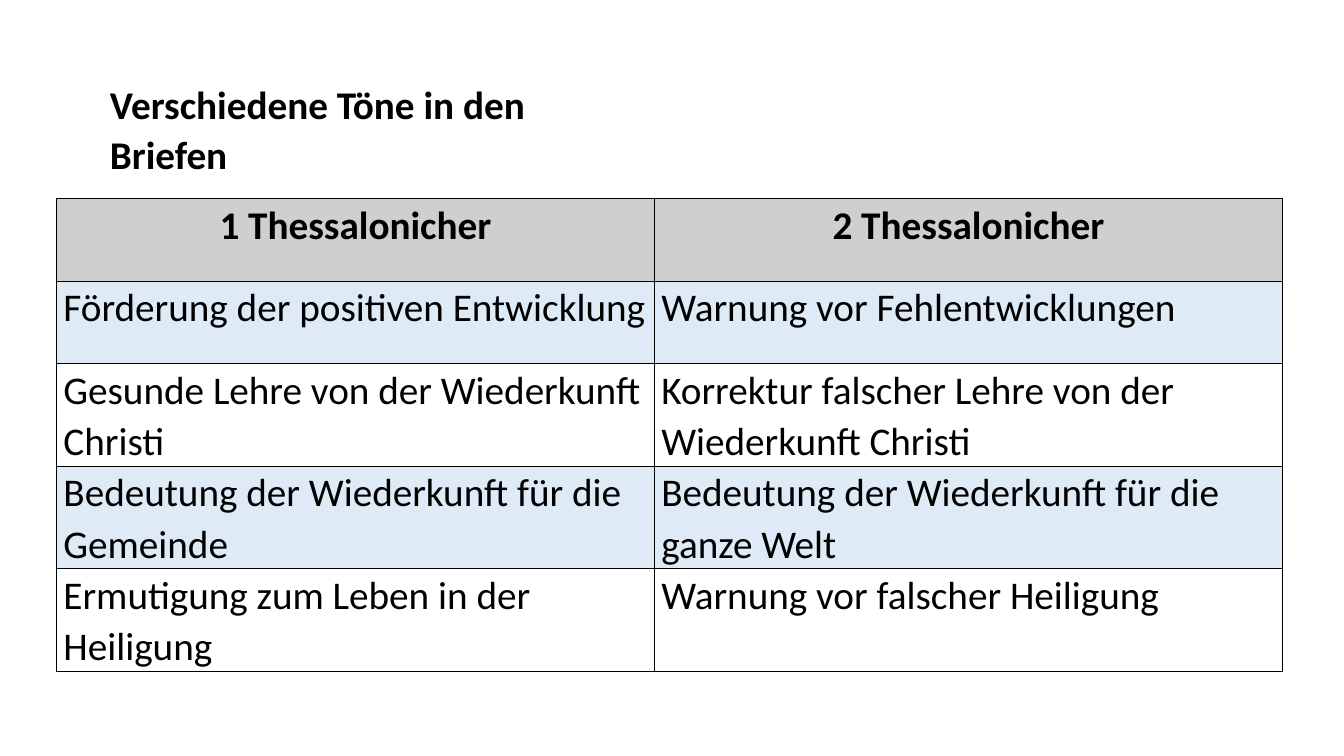
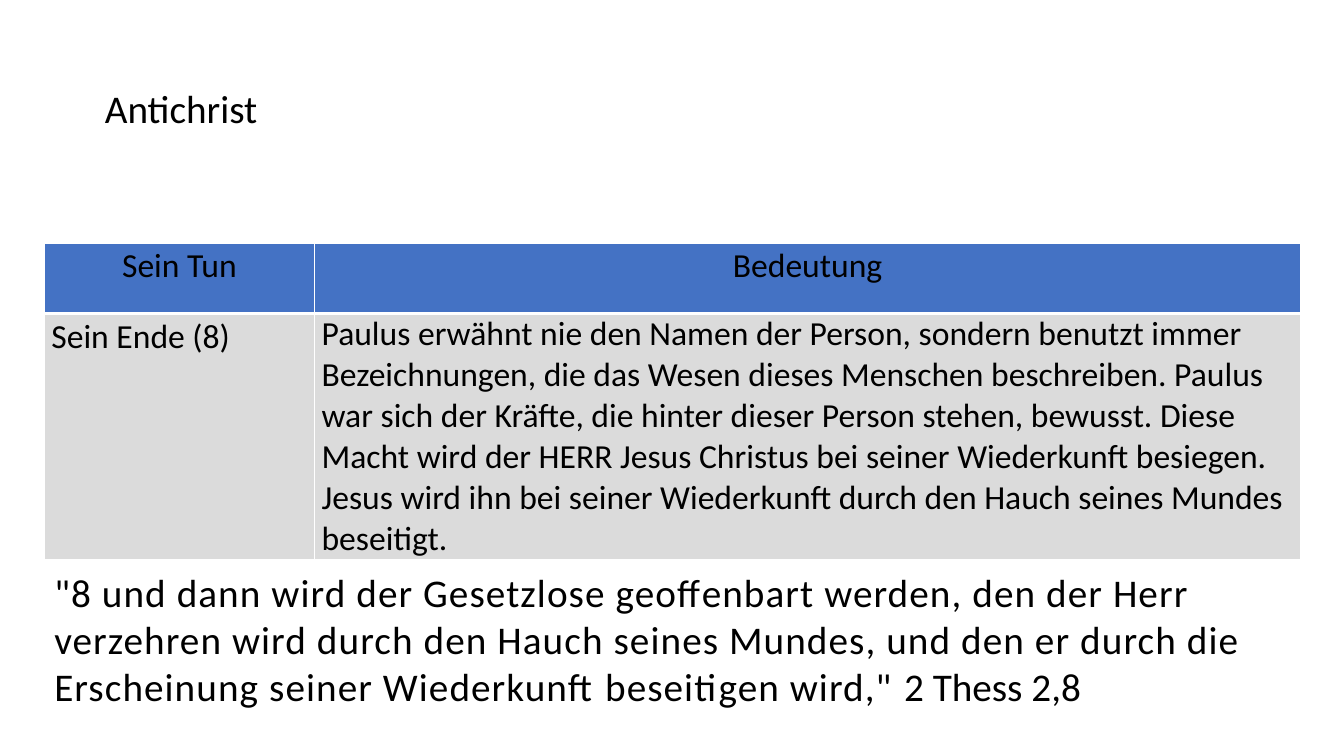
import pptx
import pptx.dml.color
import pptx.enum.text
import pptx.oxml
import pptx.oxml.ns
import pptx.util

PX = 9144  # 100 px to the inch
LEFT = pptx.enum.text.PP_ALIGN.LEFT
MID = pptx.enum.text.PP_ALIGN.CENTER
BLACK, WHITE = "000000", "FFFFFF"
GREY, PALE, BLUE, ASH = "D0CECE", "DEEAF6", "4472C4", "DBDBDB"
FRAME = {
    "word_wrap": True,
    "auto_size": pptx.enum.text.MSO_AUTO_SIZE.NONE,
    "vertical_anchor": pptx.enum.text.MSO_ANCHOR.TOP,
}
INSET = {"margin_left": 7 * PX, "margin_right": 7 * PX,
         "margin_top": 0, "margin_bottom": 0}
hue = pptx.dml.color.RGBColor.from_string


def write(frame, lines, size, bold=False, align=LEFT, space=1.07):
    """Fill a text frame; each line is a list of (text, letter spacing) runs."""
    look = {"name": "Calibri", "size": pptx.util.Pt(size), "bold": bold}
    for i, line in enumerate(lines):
        para = frame.add_paragraph() if i else frame.paragraphs[0]
        para.alignment, para.line_spacing = align, space
        for text, gap in line:
            run = para.add_run()
            run.text = text
            run.font.color.rgb = hue(BLACK)
            for key, val in look.items():
                setattr(run.font, key, val)
            if gap:
                run.font._element.set("spc", str(gap))


def edge(cell, tint, sides):
    """Draw cell borders; sides maps L, R, T and B to widths in points."""
    props = cell._tc.get_or_add_tcPr()
    for side, width in sides.items():
        props.append(pptx.oxml.parse_xml(
            f'<a:ln{side} {pptx.oxml.ns.nsdecls("a")} w="{width * 12700}">'
            f'<a:solidFill><a:srgbClr val="{tint}"/></a:solidFill></a:ln{side}>'))


thin = {"L": 1, "R": 1, "T": 1, "B": 1}
slides = [
    {
        "title": "Verschiedene Töne in den Briefen", "bold": True,
        "spot": (99, 71, 544, 58), "at": (56, 197),
        "cols": (593, 623), "rows": (82,) * 5, "size": 28, "line": BLACK,
        "fills": (GREY, PALE, None, PALE, None), "sides": (thin,) * 5,
        "cells": [
            ("1 Thessalonicher", "2 Thessalonicher"),
            ("Förderung der positiven Entwicklung",
             "Warnung vor Fehlentwicklungen"),
            ("Gesunde Lehre von der Wiederkunft Christi",
             "Korrektur falscher Lehre von der Wiederkunft Christi"),
            ("Bedeutung der Wiederkunft für die Gemeinde",
             "Bedeutung der Wiederkunft für die ganze Welt"),
            ("Ermutigung zum Leben in der Heiligung",
             "Warnung vor falscher Heiligung"),
        ],
    },
    {
        "title": "Antichrist", "bold": False,
        "spot": (94, 75, 192, 57), "at": (44, 241),
        "cols": (268, 978), "rows": (70, 239), "size": 24, "line": WHITE,
        "fills": (BLUE, ASH), "sides": (thin | {"B": 3}, thin | {"T": 3}),
        "cells": [
            ("Sein Tun", "Bedeutung"),
            ("Sein Ende (8)",
             "Paulus erwähnt nie den Namen der Person, sondern benutzt immer "
             "Bezeichnungen, die das Wesen dieses Menschen beschreiben. Paulus "
             "war sich der Kräfte, die hinter dieser Person stehen, bewusst. "
             "Diese Macht wird der HERR Jesus Christus bei seiner Wiederkunft "
             "besiegen.\n"
             "Jesus wird ihn bei seiner Wiederkunft durch den Hauch seines "
             "Mundes beseitigt."),
        ],
    },
]

deck = pptx.Presentation()
deck.slide_width, deck.slide_height = 1333 * PX, 750 * PX

for data in slides:
    slide = deck.slides.add_slide(deck.slide_layouts[5])
    title = slide.shapes.title
    title.left, title.top, title.width, title.height = [n * PX for n in data["spot"]]
    for key, val in FRAME.items():
        setattr(title.text_frame, key, val)
    write(title.text_frame, [[(data["title"], 0)]], 28, data["bold"])

    cols, rows = data["cols"], data["rows"]
    box = [n * PX for n in (*data["at"], sum(cols), sum(rows))]
    table = slide.shapes.add_table(len(rows), len(cols), *box).table
    table.first_row = table.horz_banding = False
    for c, width in enumerate(cols):
        table.columns[c].width = width * PX
    for r, texts in enumerate(data["cells"]):
        table.rows[r].height = rows[r] * PX
        for c, text in enumerate(texts):
            cell = table.cell(r, c)
            for key, val in INSET.items():
                setattr(cell, key, val)
            edge(cell, data["line"], data["sides"][r])
            if data["fills"][r]:
                cell.fill.solid()
                cell.fill.fore_color.rgb = hue(data["fills"][r])
            else:
                cell.fill.background()
            lines = [[(part, 0)] for part in text.split("\n")]
            write(cell.text_frame, lines, data["size"],
                  bold=data["bold"] and r == 0,
                  align=LEFT if r else MID,
                  space=1.0 if len(lines) > 1 else 1.07)

verse = slide.shapes.add_textbox(*[n * PX for n in (44, 559, 1246, 151)])
for key, val in FRAME.items():
    setattr(verse.text_frame, key, val)
write(verse.text_frame, [[
    ('"8 und dann wird der Gesetzlose geoffenbart werden, den der Herr '
     'verzehren wird durch den Hauch seines Mundes, und den er durch die '
     'Erscheinung seiner Wiederkunft beseitigen wird," ', 80),
    ("2 Thess 2,8", 0),
]], 28, space=1.0)

deck.save("out.pptx")
